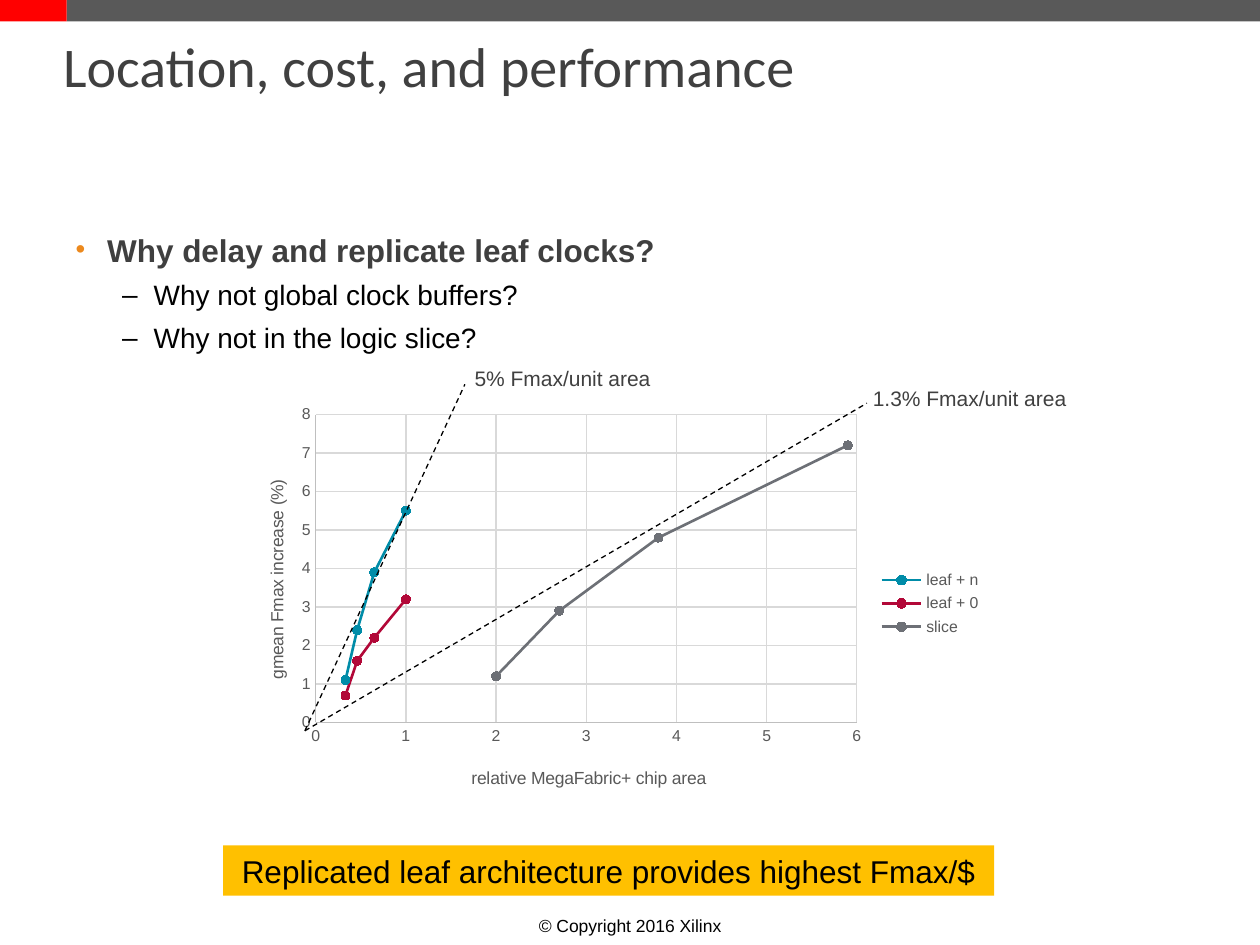
from lxml import etree
from pptx import Presentation
from pptx import util as u
from pptx.chart.data import XyChartData
from pptx.dml.color import RGBColor
from pptx.enum import chart as c, dml, shapes, text
from pptx.oxml import parse_xml
from pptx.oxml.ns import nsdecls, qn


def color(value):
    return RGBColor.from_string(value)


def style(font, size, hex_color, name="Arial", bold=False):
    values = {"size": u.Pt(size), "name": name, "bold": bold}
    for key, value in values.items():
        setattr(font, key, value)
    font.color.rgb = color(hex_color)


prs = Presentation()
prs.slide_width, prs.slide_height = u.Inches(10), u.Inches(7.5)
s = prs.slides.add_slide(prs.slide_layouts[1])
title, body = s.placeholders

places = [(title, (0.5, 0.23, 9, 0.58)), (body, (0.5, 1.75, 9, 4.67))]
for sp, box in places:
    sp.left, sp.top, sp.width, sp.height = map(u.Inches, box)
    sp.text_frame.auto_size = text.MSO_AUTO_SIZE.NONE
    sp.text_frame.vertical_anchor = text.MSO_ANCHOR.TOP

title.text_frame.margin_left = 0
p = title.text_frame.paragraphs[0]
p.alignment, p.line_spacing = text.PP_ALIGN.LEFT, 0.98
r = p.add_run()
r.text = "Location, cost, and performance"
style(r.font, 32, "404040", "Calibri")

bullets = [
    ("Why delay and replicate leaf clocks?", 0, 18, "3F3F3F", 0.25, "•", "EC891D", 88),
    ("Why not global clock buffers?", 1, 16, "000000", 0.62, "–", "000000", 100),
    ("Why not in the logic slice?", 1, 16, "000000", 0.62, "–", "000000", 100),
]
tf = body.text_frame
for i, (words, level, size, ink, indent, mark, mark_ink, scale) in enumerate(bullets):
    p = tf.paragraphs[0] if i == 0 else tf.add_paragraph()
    p.level, p.line_spacing = level, 1.1
    p.space_before = u.Pt(3.5 if i else 0)
    pPr = p._p.get_or_add_pPr()
    pPr.set("marL", str(u.Inches(indent)))
    pPr.set("indent", str(u.Inches(-0.25)))
    clr = etree.SubElement(pPr, qn("a:buClr"))
    etree.SubElement(clr, qn("a:srgbClr"), val=mark_ink)
    etree.SubElement(pPr, qn("a:buSzPct"), val=str(scale * 1000))
    etree.SubElement(pPr, qn("a:buFont"), typeface="Arial")
    etree.SubElement(pPr, qn("a:buChar"), char=mark)
    r = p.add_run()
    r.text = words
    style(r.font, size, ink, bold=level == 0)

rects = [
    ((0.53, 0, 9.47, 0.17), "595959", ""),
    ((0, 0, 0.53, 0.17), "FF0000", ""),
    ((1.77, 6.71, 6.12, 0.4), "FFC000", "Replicated leaf architecture provides highest Fmax/$"),
]
for box, fill, words in rects:
    sp = s.shapes.add_shape(shapes.MSO_SHAPE.RECTANGLE, *map(u.Inches, box))
    sp.shadow.inherit = False
    sp.fill.solid()
    sp.fill.fore_color.rgb = color(fill)
    sp.line.fill.background()
    if words:
        sp.text_frame.vertical_anchor = text.MSO_ANCHOR.MIDDLE
        p = sp.text_frame.paragraphs[0]
        p.alignment = text.PP_ALIGN.CENTER
        r = p.add_run()
        r.text = words
        style(r.font, 18, "000000")

leaf_area = [0.33, 0.46, 0.65, 1]
series = [
    ("leaf + n", leaf_area, [1.1, 2.4, 3.9, 5.5], "008CA8"),
    ("leaf + 0", leaf_area, [0.7, 1.6, 2.2, 3.2], "B20838"),
    ("slice", [2, 2.7, 3.8, 5.9], [1.2, 2.9, 4.8, 7.2], "6D7076"),
]
data = XyChartData()
for name, areas, gains, ink in series:
    ser = data.add_series(name)
    for area, gain in zip(areas, gains):
        ser.add_data_point(area, gain)
chart = s.shapes.add_chart(
    c.XL_CHART_TYPE.XY_SCATTER_LINES, *map(u.Inches, (1.84, 3.16, 6.05, 3.26)), data
).chart
style(chart.font, 10, "000000")
chart.has_title = False
chart.has_legend = True
chart.legend.position = c.XL_LEGEND_POSITION.RIGHT
chart.legend.include_in_layout = False
style(chart.legend.font, 9, "595959")
chart.plots[0].vary_by_categories = False

for ser, (name, areas, gains, ink) in zip(chart.plots[0].series, series):
    ser.smooth = False
    ser.format.line.color.rgb = color(ink)
    ser.format.line.width = u.Pt(1.5)
    ser.marker.style, ser.marker.size = c.XL_MARKER_STYLE.CIRCLE, 5
    ser.marker.format.fill.solid()
    ser.marker.format.fill.fore_color.rgb = color(ink)
    ser.marker.format.line.color.rgb = color(ink)

layouts = [(chart._chartSpace.chart.plotArea, {"x": 0.11, "y": 0.04, "w": 0.71, "h": 0.75})]
axes = [
    (chart.category_axis, "relative MegaFabric+ chip area", 6, {"x": 0.31, "y": 0.89}),
    (chart.value_axis, "gmean Fmax increase (%)", 8, {"x": 0.04, "y": 0.19}),
]
for axis, words, top, place in axes:
    values = {
        "minimum_scale": 0,
        "maximum_scale": top,
        "major_unit": 1,
        "has_major_gridlines": True,
        "major_tick_mark": c.XL_TICK_MARK.NONE,
        "minor_tick_mark": c.XL_TICK_MARK.NONE,
    }
    for key, value in values.items():
        setattr(axis, key, value)
    axis.tick_labels.number_format = "General"
    axis.tick_labels.number_format_is_linked = False
    style(axis.tick_labels.font, 9, "595959")
    for line, ink in [(axis.format.line, "BFBFBF"), (axis.major_gridlines.format.line, "D9D9D9")]:
        line.color.rgb = color(ink)
        line.width = u.Pt(0.75)
    r = axis.axis_title.text_frame.paragraphs[0].add_run()
    r.text = words
    style(r.font, 10, "595959")
    layouts.append((axis.axis_title._element, place))

for element, place in layouts:
    for old in element.findall(qn("c:layout")):
        element.remove(old)
    target = '<c:layoutTarget val="inner"/>' if "w" in place else ""
    modes = "".join(f'<c:{k}Mode val="edge"/>' for k in place if k in "xy")
    sizes = "".join(f'<c:{k} val="{v}"/>' for k, v in place.items())
    layout = parse_xml(
        f'<c:layout {nsdecls("c")}><c:manualLayout>{target}{modes}{sizes}</c:manualLayout></c:layout>'
    )
    element.insert(0 if target else 1, layout)

for end in [(6.88, 3.2), (3.69, 3.05)]:
    line = s.shapes.add_connector(
        shapes.MSO_CONNECTOR.STRAIGHT, *map(u.Inches, (2.42, 5.8, *end))
    )
    line.line.color.rgb = color("000000")
    line.line.width = u.Pt(0.75)
    line.line.dash_style = dml.MSO_LINE.DASH
    etree.SubElement(line._element.spPr, qn("a:effectLst"))

labels = [
    ((6.92, 3.01, 1.65, 0.3), "1.3% Fmax/unit area", 12, "404040", 0),
    ((3.76, 2.85, 1.51, 0.3), "5% Fmax/unit area", 12, "404040", 0),
    ((0, 7.21, 10, 0.28), "© Copyright 2016 Xilinx", 10, "000000", 0.1),
]
for box, words, size, ink, inset in labels:
    tf = s.shapes.add_textbox(*map(u.Inches, box)).text_frame
    tf.word_wrap = inset > 0
    tf.margin_left = u.Inches(inset)
    p = tf.paragraphs[0]
    p.alignment = text.PP_ALIGN.CENTER
    r = p.add_run()
    r.text = words
    style(r.font, size, ink)

prs.save("out.pptx")
